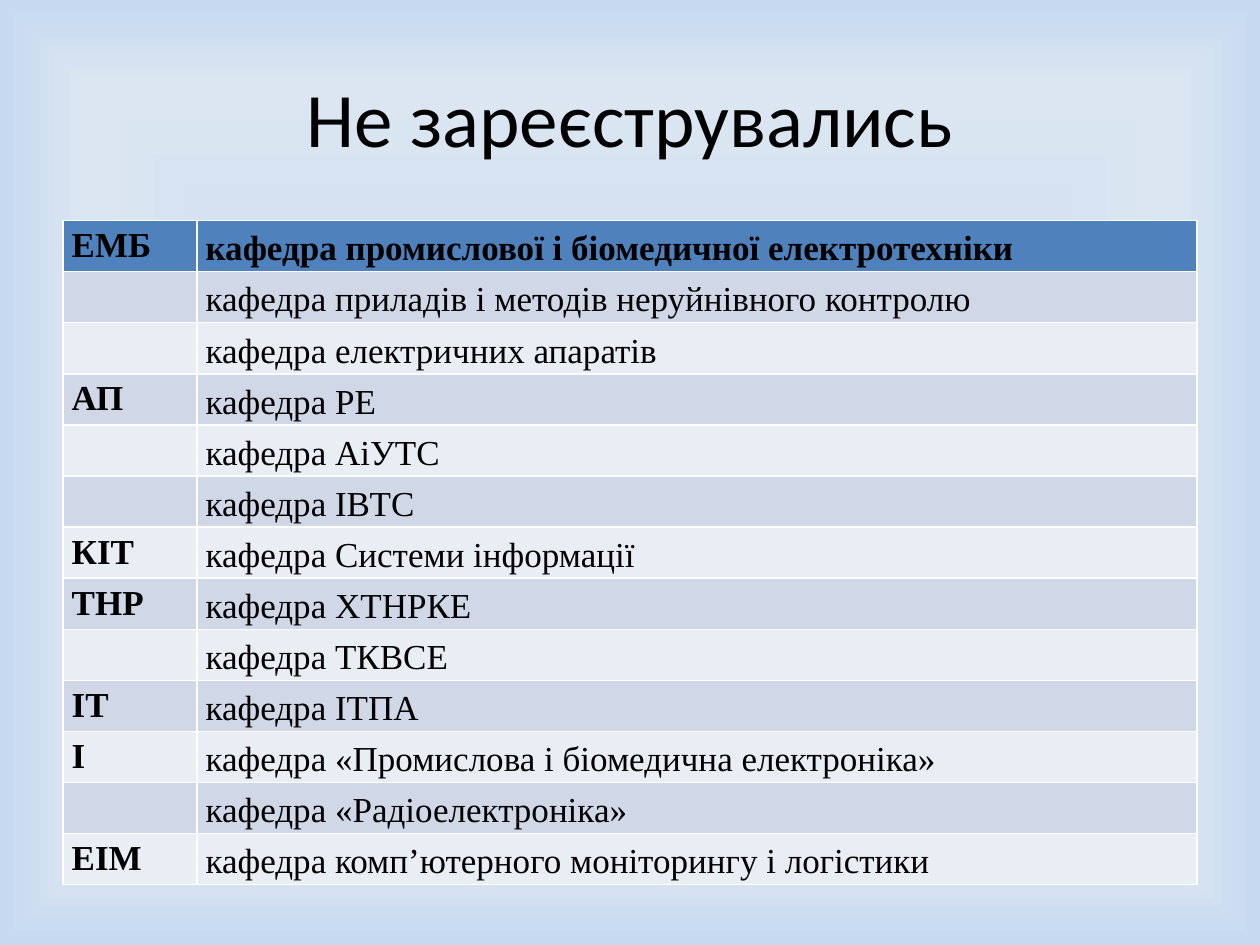
from dataclasses import dataclass

from lxml.etree import SubElement
from pptx import Presentation
from pptx.dml.color import RGBColor
from pptx.enum.text import MSO_ANCHOR, PP_ALIGN
from pptx.oxml.ns import qn
from pptx.util import Pt


@dataclass(frozen=True)
class Theme:
    title_font: str = "Calibri"
    table_font: str = "Times New Roman"
    title_size: int = 44
    table_size: int = 20
    text: str = "000000"
    header: str = "4F81BD"
    bands: tuple = ("D0D8E8", "E9EDF4")
    gradient: tuple = (
        (0, "C6D9F1"), (31, "CEDEF1"), (82, "DCE6F2"), (95, "CCDDF1"),
        (97, "CADCF1"), (97, "C9DBF1"), (99, "C8DAF1"), (100, "C6D9F1"),
        (100, "8EB4E3"),
    )


def add_run(para, text, font, size, bold=False):
    span = para.add_run()
    span.text = text
    span.font.name = font
    span.font.size = Pt(size)
    span.font.bold = bold
    span.font.color.rgb = RGBColor.from_string(theme.text)


theme = Theme()
departments = [
    ("ЕМБ", "кафедра промислової і біомедичної електротехніки"),
    ("", "кафедра приладів і методів неруйнівного контролю"),
    ("", "кафедра електричних апаратів"),
    ("АП", "кафедра РЕ"),
    ("", "кафедра АіУТС"),
    ("", "кафедра ІВТС"),
    ("КІТ", "кафедра Системи інформації"),
    ("ТНР", "кафедра ХТНРКЕ"),
    ("", "кафедра ТКВСЕ"),
    ("ІТ", "кафедра ІТПА"),
    ("І", "кафедра «Промислова і біомедична електроніка»"),
    ("", "кафедра «Радіоелектроніка»"),
    ("ЕІМ", "кафедра комп’ютерного моніторингу і логістики"),
]

deck = Presentation()
deck.slide_width = Pt(720)
deck.slide_height = Pt(540)
page = deck.slides.add_slide(deck.slide_layouts[5])

page.background.fill.gradient()
gradient = next(page.element.iter(qn("a:gradFill")))
for child in list(gradient):
    gradient.remove(child)
stops = SubElement(gradient, qn("a:gsLst"))
for position, color in theme.gradient:
    stop = SubElement(stops, qn("a:gs"), pos=str(position * 1000))
    SubElement(stop, qn("a:srgbClr"), val=color)
shade = SubElement(gradient, qn("a:path"), path="rect")
SubElement(shade, qn("a:fillToRect"), l="50000", t="50000", r="50000", b="50000")

title = page.shapes.title
title.left, title.top, title.width, title.height = Pt(36), Pt(21.6), Pt(648), Pt(90)
title.text_frame.vertical_anchor = MSO_ANCHOR.MIDDLE
title_para = title.text_frame.paragraphs[0]
title_para.alignment = PP_ALIGN.CENTER
add_run(title_para, "Не зареєструвались", theme.title_font, theme.title_size)

row_height = Pt(29.2)
table = page.shapes.add_table(
    len(departments), 2, Pt(36), Pt(126), Pt(648), row_height * len(departments)
).table
table.columns[0].width = Pt(76.5)
table.columns[1].width = Pt(571.5)

for row_index, names in enumerate(departments):
    table.rows[row_index].height = row_height
    color = theme.bands[(row_index - 1) % 2] if row_index else theme.header
    for column_index, name in enumerate(names):
        cell = table.cell(row_index, column_index)
        cell.fill.solid()
        cell.fill.fore_color.rgb = RGBColor.from_string(color)
        cell.margin_left = cell.margin_right = Pt(5)
        cell.margin_top = cell.margin_bottom = Pt(0)
        cell.vertical_anchor = MSO_ANCHOR.MIDDLE if column_index else MSO_ANCHOR.TOP
        para = cell.text_frame.paragraphs[0]
        para.line_spacing = 1.15
        if name:
            bold = row_index == 0 or column_index == 0
            add_run(para, name, theme.table_font, theme.table_size, bold)

deck.save("out.pptx")
